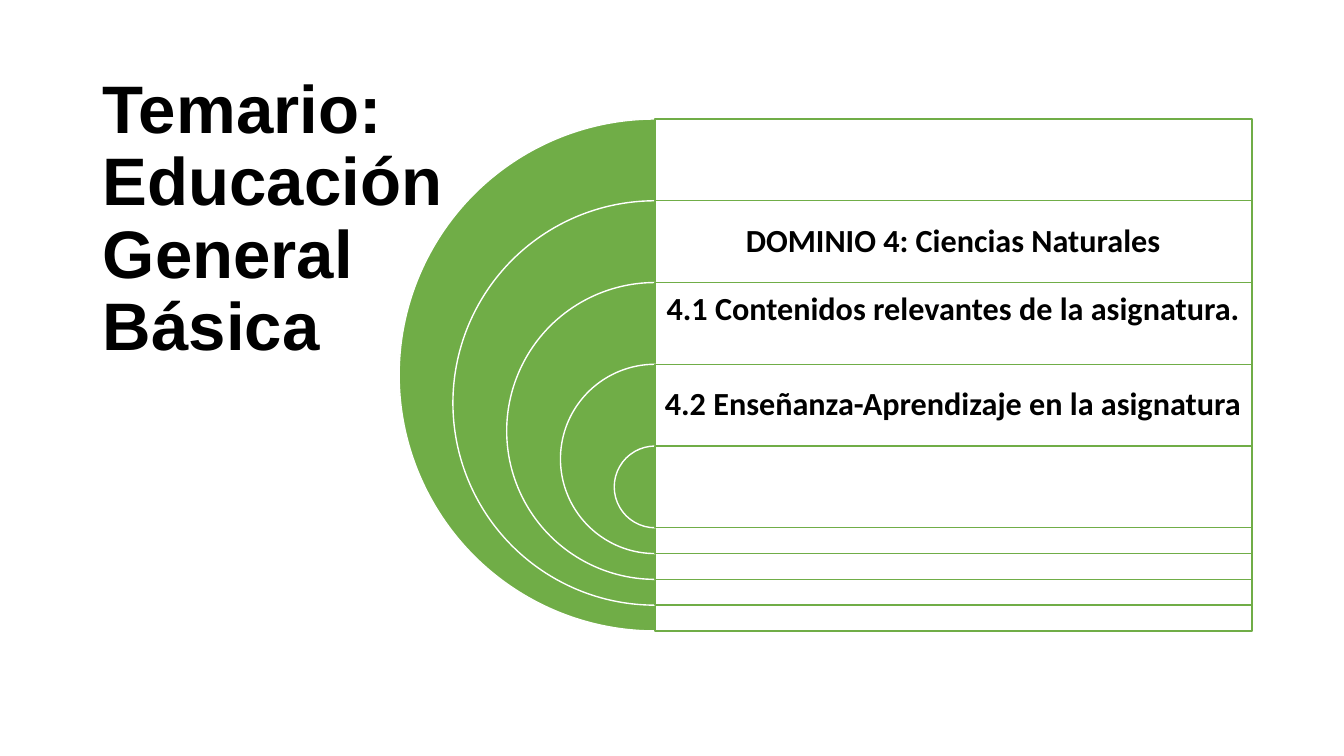
from lxml.etree import SubElement
from pptx import Presentation
from pptx.dml.color import RGBColor
from pptx.enum.shapes import MSO_SHAPE
from pptx.enum.text import MSO_ANCHOR, MSO_AUTO_SIZE, PP_ALIGN
from pptx.oxml.ns import qn
from pptx.util import Cm, Pt

COLOURS = {"green": "70AD47", "white": "FFFFFF", "black": "000000"}
TITLE_FONT = {"name": "Arial", "size": Pt(48), "bold": True}
TOPIC_FONT = {"name": "Calibri", "size": Pt(23), "bold": True}
TOPICS = [
    ("", MSO_ANCHOR.MIDDLE),
    ("DOMINIO 4: Ciencias Naturales", MSO_ANCHOR.MIDDLE),
    ("4.1 Contenidos relevantes de la asignatura.", MSO_ANCHOR.TOP),
    ("4.2 Enseñanza-Aprendizaje en la asignatura", MSO_ANCHOR.MIDDLE),
    ("", MSO_ANCHOR.MIDDLE),
]
CENTRE_X = 16.51
FIRST_TOP = 3.0
ROW_HEIGHT = 2.06
OUTER_DIAMETER = 12.9
DIAMETER_STEP = 2.71
PANEL_WIDTH = 15.04


def colour(name):
    return RGBColor.from_string(COLOURS[name])


def set_values(target, values):
    for name, value in values.items():
        setattr(target, name, value)


def write_text(shape, text, font, alignment, frame_format):
    frame = shape.text_frame
    frame.text = text
    set_values(frame, {"word_wrap": True, "auto_size": MSO_AUTO_SIZE.NONE, **frame_format})
    for paragraph in frame.paragraphs:
        set_values(paragraph, {"alignment": alignment, "line_spacing": 0.9})
        for run in paragraph.runs:
            set_values(run.font, font)
            run.font.color.rgb = colour("black")


def add_title(slide):
    title = slide.shapes.title
    set_values(title, {"left": Cm(2.34), "top": Cm(1.55), "width": Cm(9.25), "height": Cm(8)})
    write_text(title, "Temario:\vEducación General Básica", TITLE_FONT, PP_ALIGN.LEFT,
               {"vertical_anchor": MSO_ANCHOR.MIDDLE})


def add_filled_shape(slide, kind, left, top, width, height, fill, line):
    shape = slide.shapes.add_shape(kind, Cm(left), Cm(top), Cm(width), Cm(height))
    shape.shadow.inherit = False
    shape.fill.solid()
    shape.fill.fore_color.rgb = colour(fill)
    shape.line.color.rgb = colour(line)
    shape.line.width = Pt(1)
    return shape


def add_half_disc(slide, top, diameter):
    disc = add_filled_shape(slide, MSO_SHAPE.PIE, CENTRE_X - diameter / 2, top,
                            diameter, diameter, "green", "white")
    disc.adjustments[0] = 54
    disc.adjustments[1] = 162


def add_panel(slide, top, height):
    panel = add_filled_shape(slide, MSO_SHAPE.RECTANGLE, CENTRE_X, top,
                             PANEL_WIDTH, height, "white", "green")
    fill_colour = panel.fill._xPr.find(qn("a:solidFill"))[0]
    SubElement(fill_colour, qn("a:alpha"), val="90000")


def add_topic(slide, top, text, anchor):
    box = slide.shapes.add_textbox(Cm(CENTRE_X), Cm(top), Cm(PANEL_WIDTH), Cm(ROW_HEIGHT))
    write_text(box, text, TOPIC_FONT, PP_ALIGN.CENTER, {
        "vertical_anchor": anchor,
        "margin_left": Cm(0.2), "margin_right": Cm(0.2),
        "margin_top": Cm(0.25), "margin_bottom": Cm(0.25),
    })


def main():
    presentation = Presentation()
    presentation.slide_width = Cm(33.87)
    presentation.slide_height = Cm(19.05)
    slide = presentation.slides.add_slide(presentation.slide_layouts[5])
    add_title(slide)
    for level, (text, anchor) in enumerate(TOPICS):
        top = FIRST_TOP + level * ROW_HEIGHT
        diameter = OUTER_DIAMETER - level * DIAMETER_STEP
        add_half_disc(slide, top, diameter)
        add_panel(slide, top, diameter)
        if text:
            add_topic(slide, top, text, anchor)
    presentation.save("out.pptx")


if __name__ == "__main__":
    main()
